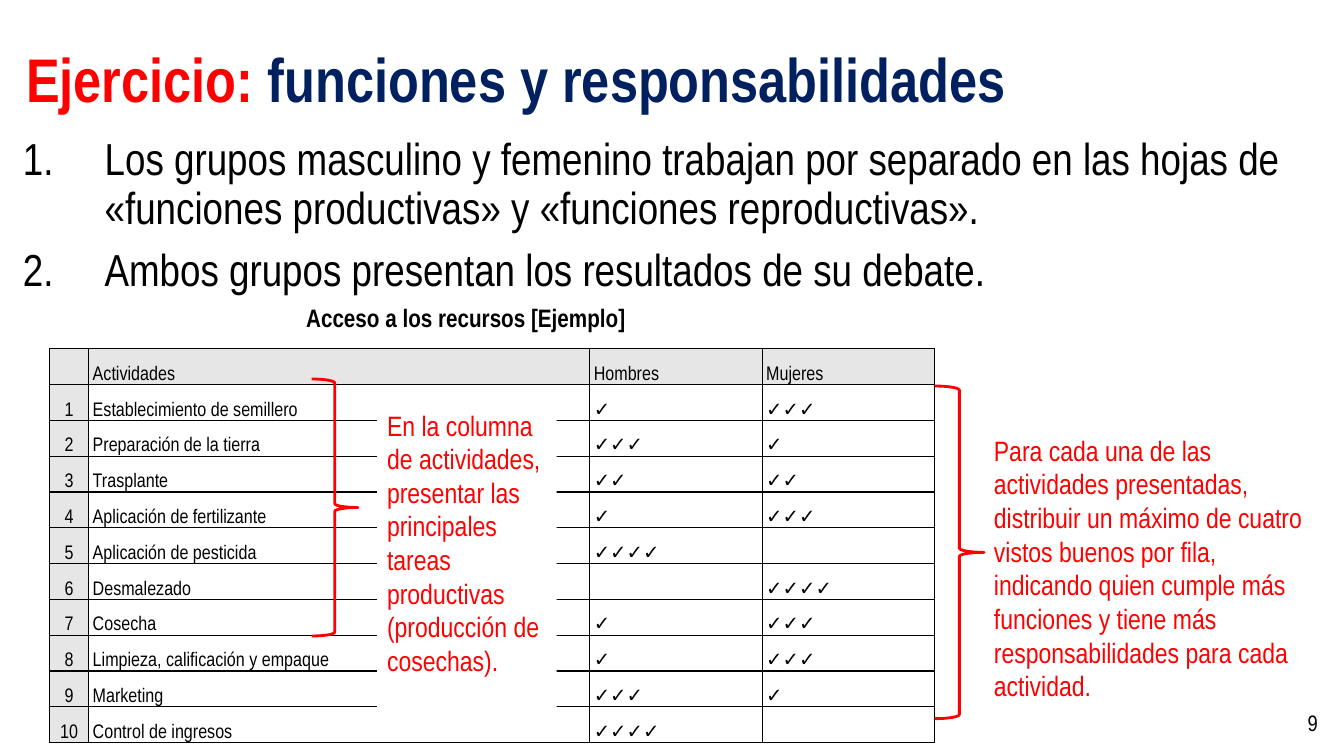
from dataclasses import dataclass

from lxml import etree
from pptx import Presentation
from pptx.dml.color import RGBColor
from pptx.enum.shapes import MSO_SHAPE
from pptx.enum.text import MSO_ANCHOR, MSO_AUTO_SIZE, PP_ALIGN
from pptx.oxml.ns import qn
from pptx.util import Inches, Pt

FONT = "Arial Narrow"
RED, NAVY, BLACK, WHITE, GRAY = "FF0000", "002060", "000000", "FFFFFF", "E7E6E6"
LEFT, CENTER, RIGHT = PP_ALIGN.LEFT, PP_ALIGN.CENTER, PP_ALIGN.RIGHT
TOP, MIDDLE, BOTTOM = MSO_ANCHOR.TOP, MSO_ANCHOR.MIDDLE, MSO_ANCHOR.BOTTOM
GROW, FIXED = MSO_AUTO_SIZE.SHAPE_TO_FIT_TEXT, MSO_AUTO_SIZE.NONE
RECT, BRACE = MSO_SHAPE.RECTANGLE, MSO_SHAPE.RIGHT_BRACE
Box = tuple[float, float, float, float]


@dataclass
class Label:
    box: Box
    text: str
    size: int
    color: str = BLACK
    bold: bool = False
    align: PP_ALIGN = LEFT
    anchor: MSO_ANCHOR = TOP
    autosize: MSO_AUTO_SIZE = GROW
    fill: str | None = None


@dataclass
class Activity:
    name: str
    men: int
    women: int


TITLE = Label((0.16, 0.09, 12.31, 1.45), "Ejercicio: ", 44, RED, True,
              anchor=MIDDLE, autosize=FIXED)
STEPS = Label((0.13, 1.31, 12.97, 1.8),
              "Los grupos masculino y femenino trabajan por separado en las hojas de "
              "«funciones productivas» y «funciones reproductivas».\n"
              "Ambos grupos presentan los resultados de su debate.", 32, autosize=FIXED)
PAGE = Label((10.17, 6.97, 3, 0.4), "9", 16, align=RIGHT, anchor=MIDDLE, autosize=FIXED)
MARKS_NOTE = Label((9.76, 4.25, 3.26, 2.79),
                   "Para cada una de las actividades presentadas, distribuir un máximo de "
                   "cuatro vistos buenos por fila, indicando quien cumple más funciones y "
                   "tiene más responsabilidades para cada actividad.", 20, RED)
TASKS_NOTE = Label((3.74, 4, 1.78, 3.13),
                   "En la columna de actividades, presentar las principales tareas "
                   "productivas (producción de cosechas).", 20, RED, fill=WHITE)
TABLE_TITLE = Label((1.55, 2.95, 6.14, 0.4), "Acceso a los recursos [Ejemplo]", 18,
                    bold=True, align=CENTER)
BRACES: list[Box] = [(9.27, 3.83, 0.49, 3.3), (3.09, 3.76, 0.46, 2.55)]
TABLE_BOX: Box = (0.49, 3.46, 8.78, 3.91)
COLUMNS = [0.39, 4.97, 1.71, 1.71]
HEADER = ["", "Actividades", "Hombres", "Mujeres"]
ACTIVITIES = [
    Activity("Establecimiento de semillero", 1, 3),
    Activity("Preparación de la tierra", 3, 1),
    Activity("Trasplante", 2, 2),
    Activity("Aplicación de fertilizante", 1, 3),
    Activity("Aplicación de pesticida", 4, 0),
    Activity("Desmalezado", 0, 4),
    Activity("Cosecha", 1, 3),
    Activity("Limpieza, calificación y empaque", 1, 3),
    Activity("Marketing", 3, 1),
    Activity("Control de ingresos", 4, 0),
]


def rgb(color: str) -> RGBColor:
    return RGBColor.from_string(color)


def inches(box: Box) -> list[Inches]:
    return [Inches(v) for v in box]


def style_run(r, size: int, color: str, bold: bool = False) -> None:
    r.font.name = FONT
    r.font.size = Pt(size)
    r.font.bold = bold
    r.font.color.rgb = rgb(color)


def add_label(s, label: Label):
    """Draw a text box, or a filled rectangle when the label has a fill."""
    if label.fill:
        sp = s.shapes.add_shape(RECT, *inches(label.box))
        sp.shadow.inherit = False
        sp.fill.solid()
        sp.fill.fore_color.rgb = rgb(label.fill)
        sp.line.fill.background()
    else:
        sp = s.shapes.add_textbox(*inches(label.box))
    tf = sp.text_frame
    tf.word_wrap = True
    tf.auto_size = label.autosize
    tf.vertical_anchor = label.anchor
    tf.text = label.text
    for p in tf.paragraphs:
        p.alignment = label.align
        for r in p.runs:
            style_run(r, label.size, label.color, label.bold)
    return tf


def add_title(s) -> None:
    p = add_label(s, TITLE).paragraphs[0]
    p.line_spacing = 0.9
    r = p.add_run()
    r.text = "funciones y responsabilidades"
    style_run(r, TITLE.size, NAVY, True)


def add_steps(s) -> None:
    for p in add_label(s, STEPS).paragraphs:
        p.line_spacing = 0.9
        p.space_before = Pt(10)
        pPr = p._p.get_or_add_pPr()
        pPr.set("marL", str(Inches(0.81)))
        pPr.set("indent", str(Inches(-0.81)))
        etree.SubElement(pPr, qn("a:buFont"), typeface="+mj-lt")
        etree.SubElement(pPr, qn("a:buAutoNum"), type="arabicPeriod")


def add_brace(s, box: Box) -> None:
    sp = s.shapes.add_shape(BRACE, *inches(box))
    sp.shadow.inherit = False
    sp.fill.background()
    sp.line.color.rgb = rgb(RED)
    sp.line.width = Pt(2)


def set_borders(cell) -> None:
    tcPr = cell._tc.get_or_add_tcPr()
    for i, side in enumerate(("lnL", "lnR", "lnT", "lnB")):
        ln = etree.Element(qn(f"a:{side}"), w=str(Pt(1)))
        fill = etree.SubElement(ln, qn("a:solidFill"))
        etree.SubElement(fill, qn("a:srgbClr"), val=BLACK)
        tcPr.insert(i, ln)


def fill_cell(cell, text: str, fill: str, align: PP_ALIGN) -> None:
    cell.margin_left = cell.margin_right = Inches(0.04)
    cell.margin_top, cell.margin_bottom = Inches(0.01), 0
    cell.vertical_anchor = BOTTOM
    cell.fill.solid()
    cell.fill.fore_color.rgb = rgb(fill)
    set_borders(cell)
    if text:
        p = cell.text_frame.paragraphs[0]
        p.text = text
        p.alignment = align
        style_run(p.runs[0], 14, BLACK)


def add_activity_table(s) -> None:
    rows = [HEADER] + [[str(n), a.name, "✓" * a.men, "✓" * a.women]
                       for n, a in enumerate(ACTIVITIES, 1)]
    table = s.shapes.add_table(len(rows), len(COLUMNS), *inches(TABLE_BOX)).table
    for column, width in zip(table.columns, COLUMNS):
        column.width = Inches(width)
    for i, row in enumerate(rows):
        for j, text in enumerate(row):
            fill = GRAY if i == 0 or j == 0 else WHITE
            fill_cell(table.cell(i, j), text, fill, CENTER if j == 0 else LEFT)


def main() -> None:
    prs = Presentation()
    prs.slide_width, prs.slide_height = Inches(13.33), Inches(7.5)
    s = prs.slides.add_slide(prs.slide_layouts[6])
    add_title(s)
    add_steps(s)
    add_label(s, PAGE)
    add_label(s, MARKS_NOTE)
    add_activity_table(s)
    add_label(s, TASKS_NOTE)
    for box in BRACES:
        add_brace(s, box)
    add_label(s, TABLE_TITLE)
    prs.save("out.pptx")


if __name__ == "__main__":
    main()
